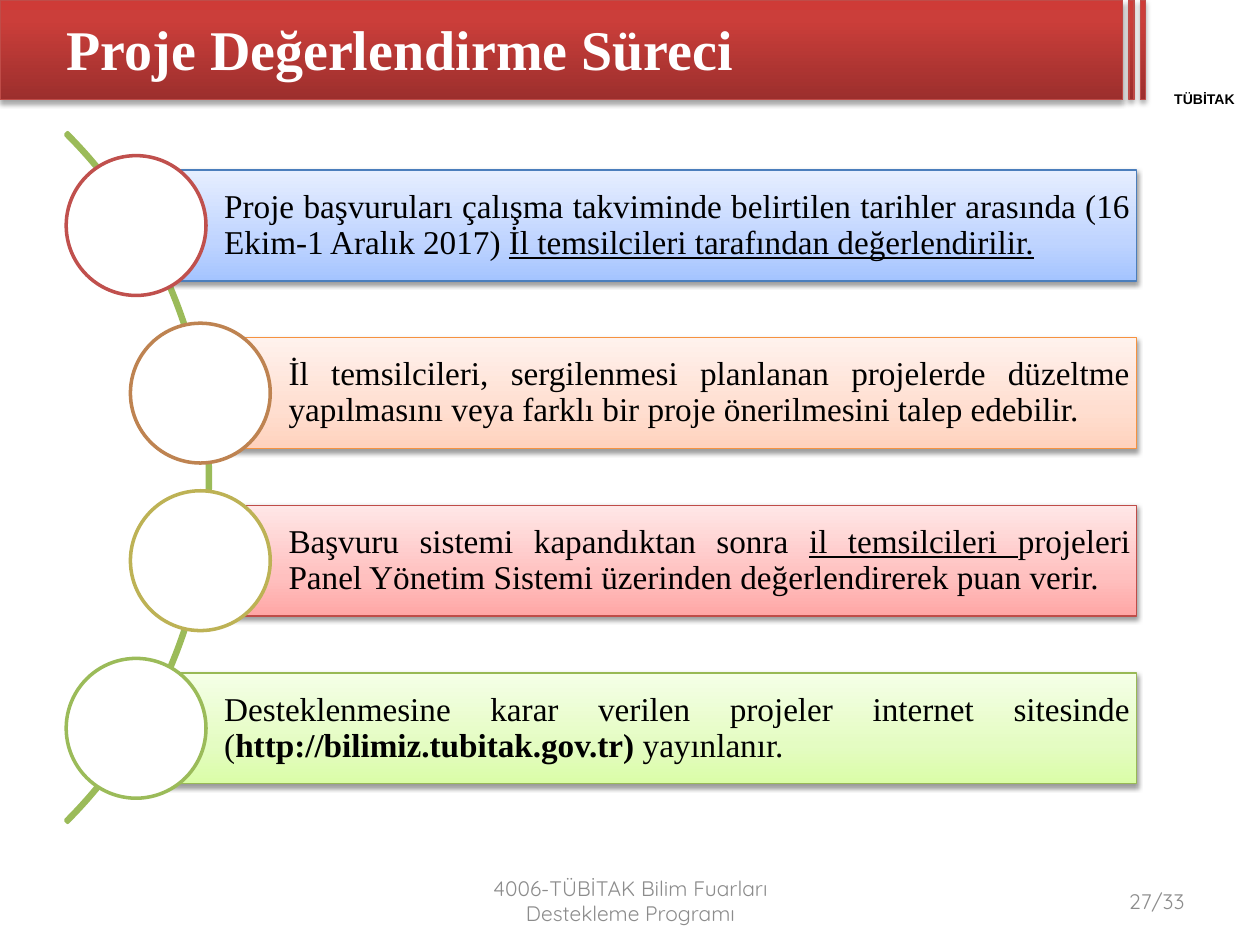
from dataclasses import dataclass
from typing import Optional

from lxml.etree import SubElement
from pptx import Presentation
from pptx.dml.color import RGBColor
from pptx.enum.shapes import MSO_SHAPE
from pptx.enum.text import MSO_ANCHOR, PP_ALIGN
from pptx.oxml.ns import qn
from pptx.util import Inches, Pt

COLOURS = {
    "white": "FFFFFF",
    "black": "000000",
    "grey": "8C8C8C",
    "header line": "BF4C48",
    "arc": "9BBB59",
}
HEADER_STOPS = ((0, "9C2F2D"), (80, "CB3E3A"), (100, "CE3B37"))
SERIF = "Times New Roman"
ROW_TOP, ROW_PITCH, ROW_HEIGHT, ROW_RIGHT = 1.35, 1.33, 0.88, 9.02
CIRCLE_SIZE = 1.11


@dataclass(frozen=True)
class Area:
    left: float
    top: float
    width: float
    height: float

    def lengths(self) -> tuple:
        return tuple(Inches(v) for v in (self.left, self.top, self.width, self.height))


@dataclass(frozen=True)
class Span:
    text: str
    bold: bool = False
    underline: bool = False


@dataclass(frozen=True)
class Style:
    size: float
    font: str
    colour: str
    align: PP_ALIGN = PP_ALIGN.LEFT
    spacing: Optional[float] = None


@dataclass(frozen=True)
class Step:
    left: float
    stops: tuple
    line: str
    ring: str
    spans: tuple


STEPS = (
    Step(1.08, ((0, "A4C4FF"), (35, "BFD4FF"), (100, "E6EEFF")), "4B7EBC", "C0504D", (
        Span("Proje başvuruları çalışma takviminde belirtilen tarihler arasında "
             "(16 Ekim-1 Aralık 2017) "),
        Span("İl temsilcileri tarafından değerlendirilir.", underline=True),
    )),
    Step(1.59, ((0, "FFD2BD"), (35, "FFDED0"), (100, "FFF2ED")), "F69240", "BE8351", (
        Span("İl temsilcileri, sergilenmesi planlanan projelerde düzeltme "
             "yapılmasını veya farklı bir proje önerilmesini talep edebilir."),
    )),
    Step(1.59, ((0, "FFA6A5"), (35, "FFC0BF"), (100, "FFE7E7")), "BF4C48", "BDB255", (
        Span("Başvuru sistemi kapandıktan sonra "),
        Span("il temsilcileri ", underline=True),
        Span("projeleri Panel Yönetim Sistemi üzerinden değerlendirerek puan verir."),
    )),
    Step(1.08, ((0, "DAFDA7"), (35, "E4FCC2"), (100, "F5FFE7")), "98B955", "9BBB59", (
        Span("Desteklenmesine karar verilen projeler internet sitesinde ("),
        Span("http://bilimiz.tubitak.gov.tr) ", bold=True),
        Span("yayınlanır."),
    )),
)


def add_outlined(page, kind: MSO_SHAPE, area: Area, line: str, width: float):
    shape = page.shapes.add_shape(kind, *area.lengths())
    shape.shadow.inherit = False
    shape.line.color.rgb = RGBColor.from_string(line)
    shape.line.width = Pt(width)
    return shape


def set_gradient(shape, stops: tuple) -> None:
    shape.fill.gradient()
    shape.fill.gradient_angle = 90
    stop_list = shape._element.spPr.find(qn("a:gradFill")).find(qn("a:gsLst"))
    for stop in list(stop_list):
        stop_list.remove(stop)
    for position, colour in stops:
        stop = SubElement(stop_list, qn("a:gs"), pos=str(position * 1000))
        SubElement(stop, qn("a:srgbClr"), val=colour)


def set_shadow(shape, opacity: int, distance: float) -> None:
    effects = shape._element.spPr.find(qn("a:effectLst"))
    shadow = SubElement(effects, qn("a:outerShdw"), blurRad=str(Pt(3.1)),
                        dist=str(Pt(distance)), dir="5400000", rotWithShape="0")
    colour = SubElement(shadow, qn("a:srgbClr"), val=COLOURS["black"])
    SubElement(colour, qn("a:alpha"), val=str(opacity * 1000))


def add_panel(page, area: Area, stops: tuple, line: str, opacity: int, distance: float):
    panel = add_outlined(page, MSO_SHAPE.RECTANGLE, area, line, 0.75)
    set_gradient(panel, stops)
    set_shadow(panel, opacity, distance)
    return panel


def write(frame, spans: tuple, style: Style, insets: tuple = (0.1, 0.05, 0.1, 0.05)) -> None:
    frame.word_wrap = True
    frame.vertical_anchor = MSO_ANCHOR.MIDDLE
    (frame.margin_left, frame.margin_top,
     frame.margin_right, frame.margin_bottom) = (Inches(v) for v in insets)
    para = frame.paragraphs[0]
    para.alignment = style.align
    if style.spacing:
        para.line_spacing = style.spacing
    for span in spans:
        run = para.add_run()
        run.text = span.text
        run.font.name = style.font
        run.font.size = Pt(style.size)
        run.font.bold = span.bold
        run.font.underline = span.underline
        run.font.color.rgb = RGBColor.from_string(style.colour)


def add_label(page, area: Area, span: Span, style: Style, **options) -> None:
    box = page.shapes.add_textbox(*area.lengths())
    write(box.text_frame, (span,), style, **options)


def add_step(page, index: int, step: Step) -> None:
    top = ROW_TOP + index * ROW_PITCH
    area = Area(step.left, top, ROW_RIGHT - step.left, ROW_HEIGHT)
    panel = add_panel(page, area, step.stops, step.line, 38, 1.6)
    style = Style(19, SERIF, COLOURS["black"], PP_ALIGN.JUSTIFY, 0.9)
    write(panel.text_frame, step.spans, style, (0.7, 0.05, 0.05, 0.05))
    circle_area = Area(step.left - CIRCLE_SIZE / 2, top + (ROW_HEIGHT - CIRCLE_SIZE) / 2,
                       CIRCLE_SIZE, CIRCLE_SIZE)
    circle = add_outlined(page, MSO_SHAPE.OVAL, circle_area, step.ring, 2)
    circle.fill.solid()
    circle.fill.fore_color.rgb = RGBColor.from_string(COLOURS["white"])


def add_header(page) -> None:
    for left, width in ((0, 8.91), (8.96, 0.04), (9.05, 0.04)):
        add_panel(page, Area(left, 0, width, 0.79), HEADER_STOPS,
                  COLOURS["header line"], 35, 1.8)
    add_label(page, Area(9.05, 0.72, 1.02, 0.13), Span("TÜBİTAK", bold=True),
              Style(8, "Arial", COLOURS["black"], PP_ALIGN.CENTER), insets=(0, 0, 0, 0))
    add_label(page, Area(0.43, 0, 8.5, 0.77), Span("Proje Değerlendirme Süreci", bold=True),
              Style(32, SERIF, COLOURS["white"]))


def add_arc(page) -> None:
    arc = add_outlined(page, MSO_SHAPE.BLOCK_ARC, Area(-6.07, -0.08, 7.74, 7.74),
                       COLOURS["arc"], 2)
    arc.fill.background()
    for index, value in enumerate((189, 27, 0.003)):
        arc.adjustments[index] = value


def add_footer(page) -> None:
    add_label(page, Area(7.17, 6.95, 2.33, 0.4), Span("27/33"),
              Style(12, "Quicksand", COLOURS["grey"], PP_ALIGN.RIGHT))
    add_label(page, Area(3.42, 6.95, 3.17, 0.4),
              Span("4006-TÜBİTAK Bilim Fuarları Destekleme Programı"),
              Style(12, "Quicksand", COLOURS["grey"], PP_ALIGN.CENTER))


def main() -> None:
    deck = Presentation()
    deck.slide_width, deck.slide_height = Inches(10), Inches(7.5)
    page = deck.slides.add_slide(deck.slide_layouts[6])
    add_header(page)
    add_arc(page)
    for index, step in enumerate(STEPS):
        add_step(page, index, step)
    add_footer(page)
    deck.save("out.pptx")


if __name__ == "__main__":
    main()
